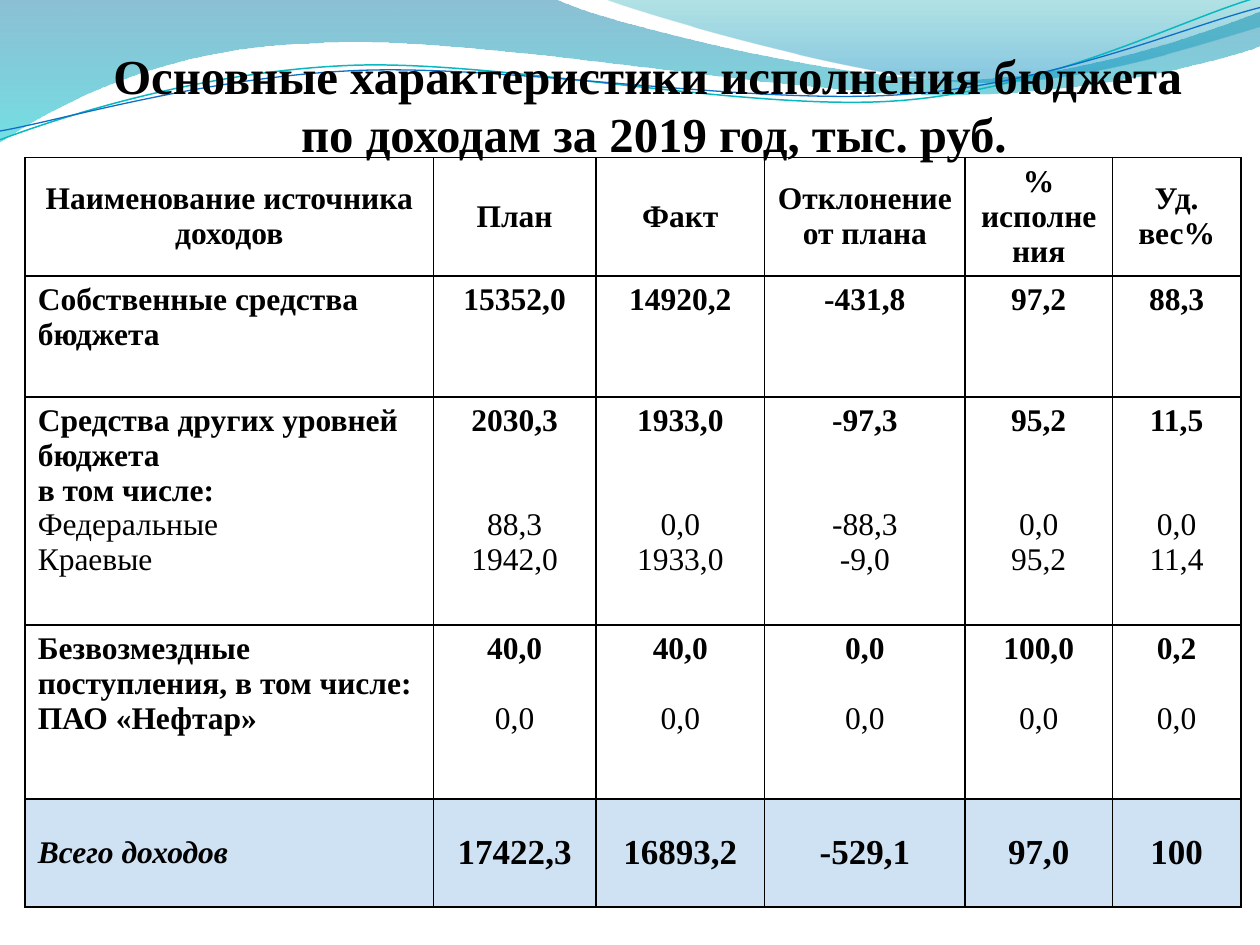
from dataclasses import dataclass

from lxml import etree
from pptx import Presentation
from pptx.dml.color import RGBColor
from pptx.enum.text import MSO_ANCHOR, PP_ALIGN
from pptx.oxml.ns import qn
from pptx.util import Inches, Pt

LEFT, MID = PP_ALIGN.LEFT, PP_ALIGN.CENTER
TOP, CENTER, LOW = MSO_ANCHOR.TOP, MSO_ANCHOR.MIDDLE, MSO_ANCHOR.BOTTOM
UNIT = Inches(0.1)


@dataclass(frozen=True)
class Theme:
    """Colours and type sizes of the slide."""
    font: str = "Times New Roman"
    ink: str = "000000"
    tint: str = "0F6FC6"
    teal: str = "0AB8BF"
    title: float = 27.9
    lead: float = 33.5
    body: float = 18
    total: float = 20
    row: float = 19.9


THEME = Theme()
WIDTHS = [32.4, 12.9, 13.4, 15.9, 11.7, 10.2]
HEIGHTS = [9.4, 9.6, 18.1, 13.8, 8.6]
HEADS = ["Наименование источника доходов", "План", "Факт",
         "Отклонение от плана", "%\nисполнения", "Уд. вес%"]
OWN = ["15352,0", "14920,2", "-431,8", "97,2", "88,3"]
OTHER = [["2030,3", "1933,0", "-97,3", "95,2", "11,5"],
         ["88,3", "0,0", "-88,3", "0,0", "0,0"],
         ["1942,0", "1933,0", "-9,0", "95,2", "11,4"]]
GIFTS = ["40,0", "40,0", "0,0", "100,0", "0,2"]
TOTAL = ["17422,3", "16893,2", "-529,1", "97,0", "100"]

BAND = [[(0, 0)], [(44, -0.1)],
        [(47.6, 1.7), (66.4, 6.3), (75.8, 6.3)],
        [(85.3, 6.3), (95.8, 2.6), (100, 0.9)], [(100.1, 3.6)],
        [(98.3, 4.4), (87, 7.6), (74.6, 7.5)],
        [(62.2, 7.5), (38.2, 2.8), (25.7, 3.4)],
        [(12.9, 3.6), (4.6, 8.3), (-0.1, 11.3)], [(0, 0)]]
CREST = [[(47.9, -0.1)],
         [(50.9, 1.1), (68.2, 6.2), (76.9, 6.5)],
         [(85.6, 6.9), (96.1, 3.2), (100, 2.1)], [(100, 0)], [(47.9, -0.1)]]
UPPER = [[(0, 11.1)],
         [(4.8, 9.3), (15.8, 5.7), (27.7, 5.2)],
         [(39.5, 4.7), (59.3, 8.9), (71.3, 8)],
         [(83.3, 7.1), (93.8, 1.5), (99.8, -0.2)]]
LOWER = [[(0, 10.4)],
         [(4.7, 9.6), (16.4, 6.1), (28.3, 5.6)],
         [(40.3, 5.1), (59.7, 8.4), (71.7, 7.5)],
         [(83.6, 6.7), (94.1, 2.1), (100, 0.6)]]


def grid(*vals):
    """Turn grid steps into slide lengths."""
    return [int(v * UNIT) for v in vals]


def fade(tag, share):
    """Give a colour tag an opacity in percent."""
    etree.SubElement(tag, qn("a:alpha")).set("val", str(share * 1000))


def curve(slide, steps, closed):
    """Draw an outline of straight steps and three-point Bezier steps."""
    dots = [tuple(grid(*dot)) for step in steps for dot in step]
    pen = slide.shapes.build_freeform(*dots[0])
    pen.add_line_segments(dots[1:], close=closed)
    shape = pen.convert_to_shape()
    shape.shadow.inherit = False
    lines = iter(list(shape._element.iter(qn("a:lnTo"))))
    for step in steps[1:]:
        parts = [next(lines) for _ in step]
        if len(step) == 3:
            bend = etree.Element(qn("a:cubicBezTo"))
            parts[0].addprevious(bend)
            for part in parts:
                bend.append(part[0])
                part.getparent().remove(part)
    return shape


def wave(slide, steps, stops):
    """Draw a filled wave with a see-through gradient going down."""
    shape = curve(slide, steps, True)
    shape.line.fill.background()
    shape.fill.gradient()
    shape.fill.gradient_angle = 270
    for stop, (place, color, share) in zip(shape.fill.gradient_stops, stops):
        stop.position = place
        stop.color.rgb = RGBColor.from_string(color)
    tags = shape._element.spPr.iter(qn("a:srgbClr"))
    for tag, (place, color, share) in zip(list(tags), stops):
        for old in list(tag):
            tag.remove(old)
        fade(tag, share)


def strand(slide, steps, color, width):
    """Draw a thin open curve."""
    shape = curve(slide, steps, False)
    shape.fill.background()
    shape.line.color.rgb = RGBColor.from_string(color)
    shape.line.width = Pt(width)


def write(para, text, size, bold=True, slant=False, align=MID, gap=0):
    """Add one run to a paragraph and style both."""
    para.alignment = align
    para.space_before = Pt(gap)
    run = para.add_run()
    run.text = text
    font = run.font
    font.name, font.size = THEME.font, Pt(size)
    font.bold, font.italic = bold, slant
    font.color.rgb = RGBColor.from_string(THEME.ink)


def edge(cell):
    """Put a thin line on each side of a cell."""
    props = cell._tc.get_or_add_tcPr()
    for i, side in enumerate("LRTB"):
        line = etree.Element(qn("a:ln" + side), w=str(Pt(1)))
        fill = etree.SubElement(line, qn("a:solidFill"))
        etree.SubElement(fill, qn("a:srgbClr"), val=THEME.ink)
        props.insert(i, line)


def put(cell, lines, anchor=TOP, tint=False):
    """Fill a cell with lines, each a dict of write options."""
    cell.vertical_anchor = anchor
    frame = cell.text_frame
    for i, line in enumerate(lines):
        para = frame.add_paragraph() if i else frame.paragraphs[0]
        write(para, **{"size": THEME.body, **line})
    if tint:
        cell.fill.solid()
        cell.fill.fore_color.rgb = RGBColor.from_string(THEME.tint)
        fade(next(cell._tc.tcPr.iter(qn("a:srgbClr"))), 20)
    else:
        cell.fill.background()
    edge(cell)


def label(*lines, plain=()):
    """List the lines of a row name, some of them not bold."""
    return [dict(text=t, align=LEFT, bold=t not in plain) for t in lines]


def rows():
    """Give the lines of each cell, row by row."""
    own = [[dict(text=t)] for t in OWN]
    other = [[dict(text=a), dict(text=b, bold=False, gap=2 * THEME.row),
              dict(text=c, bold=False)] for a, b, c in zip(*OTHER)]
    gifts = [[dict(text=t), dict(text="0,0", bold=False, gap=THEME.row)]
             for t in GIFTS]
    total = [[dict(text=t, size=THEME.total)] for t in TOTAL]
    minor = ("Федеральные", "Краевые")
    return [
        [[dict(text=t) for t in head.split("\n")] for head in HEADS],
        [label("Собственные средства бюджета")] + own,
        [label("Средства других уровней бюджета", "в том числе:",
               *minor, plain=minor)] + other,
        [label("Безвозмездные поступления, в том числе:",
               "ПАО «Нефтар»")] + gifts,
        [[dict(text="Всего доходов", align=LEFT, slant=True)]] + total,
    ]


def chart(slide):
    """Add the income table."""
    box = grid(2, 12.5, sum(WIDTHS), sum(HEIGHTS))
    table = slide.shapes.add_table(len(HEIGHTS), len(WIDTHS), *box).table
    table.first_row = table.horz_banding = False
    for col, width in zip(table.columns, grid(*WIDTHS)):
        col.width = width
    for row, height in zip(table.rows, grid(*HEIGHTS)):
        row.height = height
    last = len(HEIGHTS) - 1
    for r, row in enumerate(rows()):
        for c, lines in enumerate(row):
            anchor = CENTER if r in (0, last) else TOP
            put(table.cell(r, c), lines, anchor, r == last)


def title(slide):
    """Add the two-line heading."""
    frame = slide.shapes.add_textbox(*grid(7, 3.1, 89.8, 9.8)).text_frame
    frame.word_wrap = True
    frame.vertical_anchor = LOW
    frame.margin_left = frame.margin_right = frame.margin_bottom = 0
    para = frame.paragraphs[0]
    para.line_spacing = Pt(THEME.lead)
    write(para, "Основные характеристики исполнения бюджета ", THEME.title)
    para.add_line_break()
    write(para, "по доходам за 2019 год, тыс. руб.", THEME.title)


def main():
    """Build and save the slide."""
    deck = Presentation()
    deck.slide_width, deck.slide_height = grid(100, 75)
    slide = deck.slides.add_slide(deck.slide_layouts[6])
    wave(slide, BAND, [(0, "0074A1", 45), (1, "00C6CF", 55)])
    wave(slide, CREST, [(0, "00A1A9", 30), (0.8, "008BBF", 45)])
    strand(slide, UPPER, THEME.teal, 0.85)
    strand(slide, LOWER, THEME.tint, 0.75)
    chart(slide)
    title(slide)
    deck.save("out.pptx")


if __name__ == "__main__":
    main()
